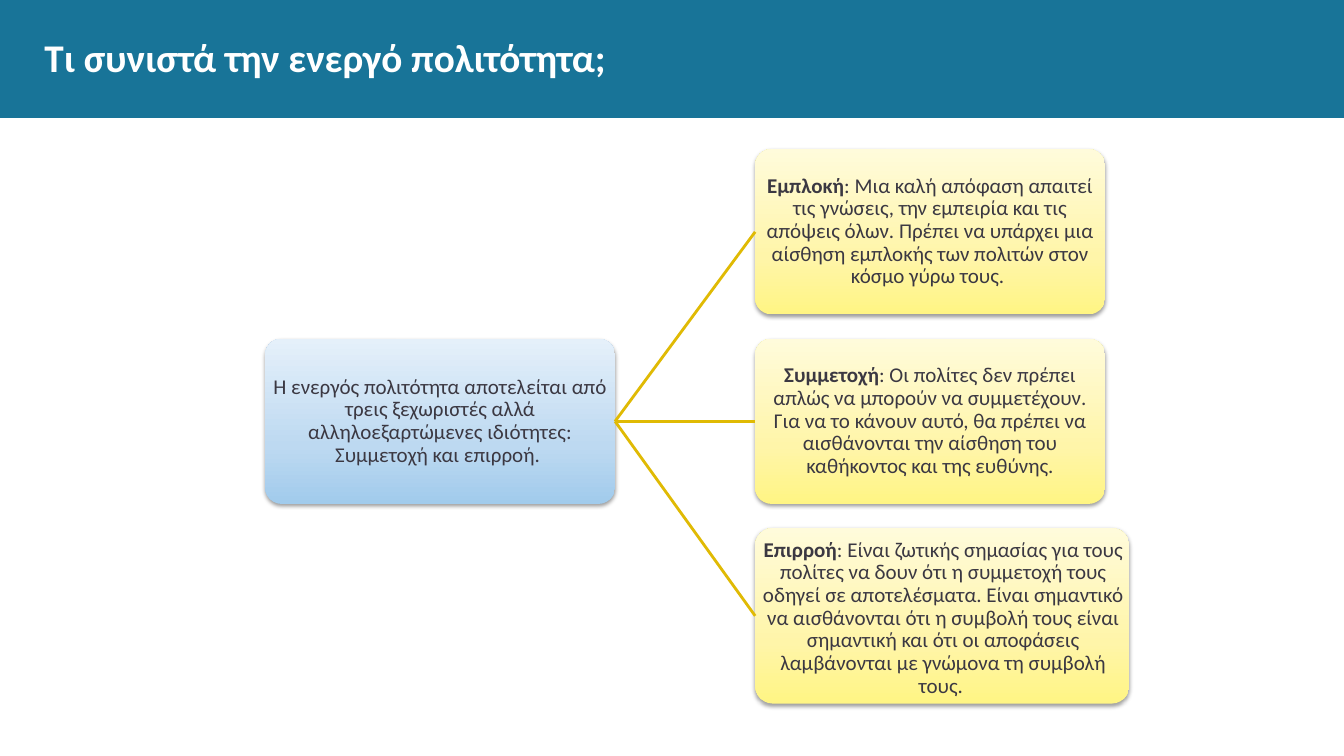
import copy

import pptx
import pptx.dml.color
import pptx.enum.shapes
import pptx.enum.text
import pptx.oxml
import pptx.oxml.ns
import pptx.util
from pptx.dml.color import RGBColor
from pptx.util import Inches

TEAL = RGBColor(0x18, 0x74, 0x98)
WHITE = RGBColor(0xFF, 0xFF, 0xFF)
INK = RGBColor(0x3B, 0x38, 0x42)
GOLD = RGBColor(0xE0, 0xBA, 0x04)
# Gradient colours run from the bottom of a box to its top
BLUES = [RGBColor(0xA1, 0xCB, 0xEC), RGBColor(0xBD, 0xD9, 0xF1), RGBColor(0xE5, 0xF0, 0xFA)]
YELLOWS = [RGBColor(0xFF, 0xF5, 0x84), RGBColor(0xFF, 0xF5, 0xA9), RGBColor(0xFF, 0xFB, 0xDB)]

BOX_WIDTH, BOX_HEIGHT = 3.47, 1.64
QUALITY_LEFT = 7.49
QUALITY_TOP, QUALITY_STEP = 1.48, 1.88

SHADOW = (
    '<a:outerShdw %s blurRad="40000" dist="20000" dir="5400000" rotWithShape="0">'
    '<a:srgbClr val="000000"><a:alpha val="38000"/></a:srgbClr></a:outerShdw>'
    % pptx.oxml.ns.nsdecls("a")
)


def style_run(run, size, color, bold):
    run.font.name = "Calibri"
    run.font.size = pptx.util.Pt(size)
    run.font.color.rgb = color
    run.font.bold = bold


def add_box(slide, left, top, width, height, colors, term, body):
    box = slide.shapes.add_shape(
        pptx.enum.shapes.MSO_SHAPE.ROUNDED_RECTANGLE,
        Inches(left), Inches(top), Inches(width), Inches(height))
    box.adjustments[0] = 0.1
    box.line.fill.background()

    # Three-stop vertical gradient
    box.fill.gradient()
    box.fill.gradient_angle = 90
    first_stop = box.element.spPr.find(".//" + pptx.oxml.ns.qn("a:gs"))
    first_stop.addnext(copy.deepcopy(first_stop))
    for stop, position, color in zip(box.fill.gradient_stops, (0, 0.35, 1), colors):
        stop.position = position
        stop.color.rgb = color

    # Soft shadow below the box
    box.shadow.inherit = False
    effects = box.element.spPr.find(pptx.oxml.ns.qn("a:effectLst"))
    effects.append(pptx.oxml.parse_xml(SHADOW))

    # Centred text with an optional bold term in front
    frame = box.text_frame
    frame.word_wrap = True
    frame.vertical_anchor = pptx.enum.text.MSO_ANCHOR.MIDDLE
    frame.margin_left = frame.margin_right = Inches(0.01)
    frame.margin_top = frame.margin_bottom = Inches(0.01)
    para = frame.paragraphs[0]
    para.alignment = pptx.enum.text.PP_ALIGN.CENTER
    para.line_spacing = 0.9
    for text, bold in ((term, True), (body, False)):
        if text:
            run = para.add_run()
            run.text = text
            style_run(run, 15, INK, bold)
    return box


deck = pptx.Presentation()
deck.slide_width = Inches(13.33)
deck.slide_height = Inches(7.5)
slide = deck.slides.add_slide(deck.slide_layouts[5])

# Title
title = slide.shapes.title
title.left, title.top = Inches(0.44), Inches(0.19)
title.width, title.height = Inches(12.46), Inches(0.74)
frame = title.text_frame
frame.text = "Τι συνιστά την ενεργό πολιτότητα;"
frame.vertical_anchor = pptx.enum.text.MSO_ANCHOR.MIDDLE
frame.margin_left = frame.margin_right = frame.margin_top = frame.margin_bottom = 0
frame.paragraphs[0].alignment = pptx.enum.text.PP_ALIGN.LEFT
style_run(frame.paragraphs[0].runs[0], 28, WHITE, True)

# Header band behind the title
band = slide.shapes.add_shape(
    pptx.enum.shapes.MSO_SHAPE.RECTANGLE, 0, 0, deck.slide_width, Inches(1.17))
band.shadow.inherit = False
band.fill.solid()
band.fill.fore_color.rgb = TEAL
band.line.fill.background()
title.element.addprevious(band.element)

# Root box, level with the middle quality
root = add_box(
    slide, 2.63, QUALITY_TOP + QUALITY_STEP, BOX_WIDTH, BOX_HEIGHT, BLUES, "",
    "Η ενεργός πολιτότητα αποτελείται από τρεις ξεχωριστές αλλά "
    "αλληλοεξαρτώμενες ιδιότητες: Συμμετοχή και επιρροή. ")

# Quality boxes, each joined to the root
qualities = [
    ("Εμπλοκή", ": Μια καλή απόφαση απαιτεί τις γνώσεις, την εμπειρία και τις "
     "απόψεις όλων. Πρέπει να υπάρχει μια αίσθηση εμπλοκής των πολιτών στον "
     "κόσμο γύρω τους. ", BOX_WIDTH, BOX_HEIGHT),
    ("Συμμετοχή", ": Οι πολίτες δεν πρέπει απλώς να μπορούν να συμμετέχουν. Για να "
     "το κάνουν αυτό, θα πρέπει να αισθάνονται την αίσθηση του καθήκοντος και "
     "της ευθύνης.", BOX_WIDTH, BOX_HEIGHT),
    ("Επιρροή", ": Είναι ζωτικής σημασίας για τους πολίτες να δουν ότι η συμμετοχή "
     "τους οδηγεί σε αποτελέσματα. Είναι σημαντικό να αισθάνονται ότι η συμβολή "
     "τους είναι σημαντική και ότι οι αποφάσεις λαμβάνονται με γνώμονα τη "
     "συμβολή τους. ", 3.71, 1.74),
]
for row, (term, body, width, height) in enumerate(qualities):
    box = add_box(slide, QUALITY_LEFT, QUALITY_TOP + row * QUALITY_STEP,
                  width, height, YELLOWS, term, body)
    link = slide.shapes.add_connector(
        pptx.enum.shapes.MSO_CONNECTOR.STRAIGHT, 0, 0, 0, 0)
    link.begin_connect(root, 3)
    link.end_connect(box, 1)
    link.line.color.rgb = GOLD
    link.line.width = pptx.util.Pt(2)
    link.element.spPr.append(pptx.oxml.parse_xml(
        "<a:effectLst %s/>" % pptx.oxml.ns.nsdecls("a")))

# The last box holds the longest text, set slightly right and low
box.text_frame.margin_left = Inches(0.02)
box.text_frame.margin_right = 0
box.text_frame.margin_top = Inches(0.06)

deck.save("out.pptx")
